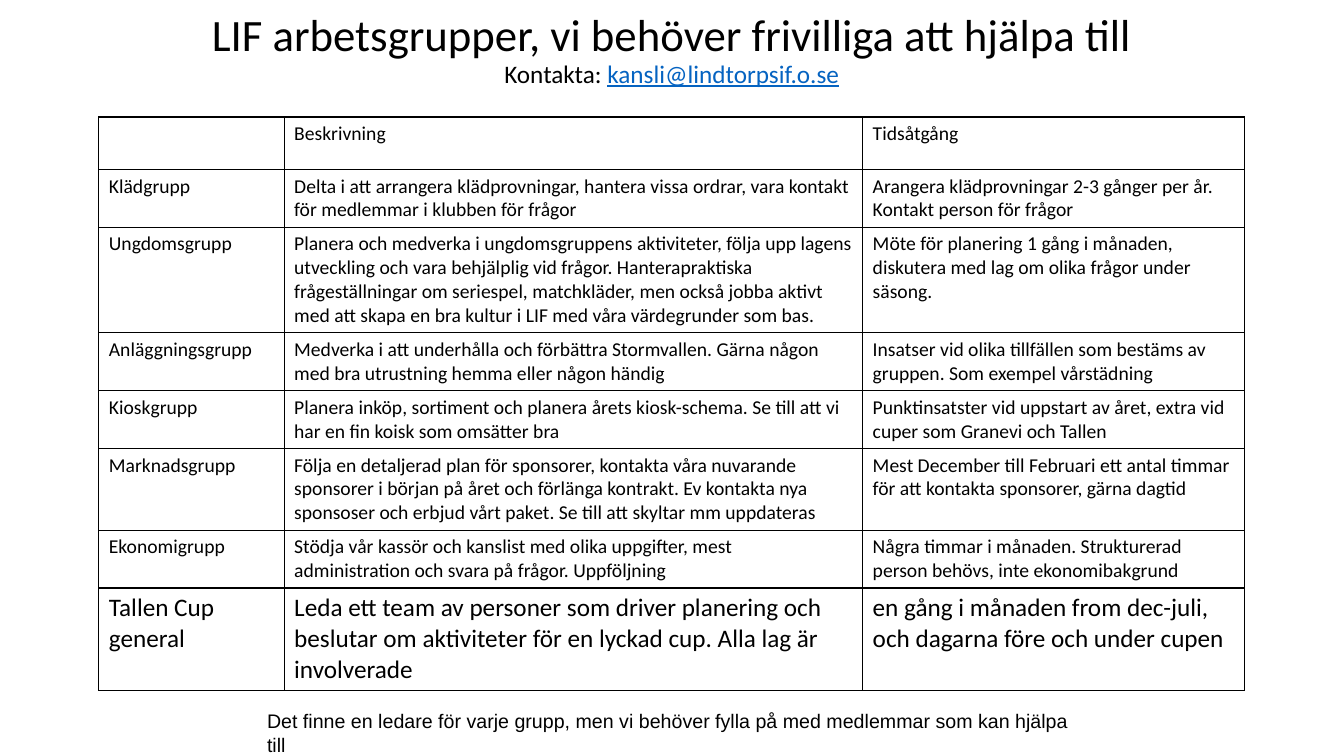
import pptx
import pptx.dml.color
import pptx.enum.text
import pptx.oxml
import pptx.oxml.ns
import pptx.util
from pptx.util import Cm

BLACK = "000000"
LINK_BLUE = "0563C1"
COLUMN_WIDTHS = [4.67, 14.58, 9.63]
ROW_HEIGHT = 1.32
GROUPS = [
    ("", "Beskrivning", "Tidsåtgång"),
    ("Klädgrupp",
     "Delta i att arrangera klädprovningar, hantera vissa ordrar, vara kontakt "
     "för medlemmar i klubben för frågor",
     "Arangera klädprovningar 2-3 gånger per år. Kontakt person för frågor"),
    ("Ungdomsgrupp",
     "Planera och medverka i ungdomsgruppens aktiviteter, följa upp lagens "
     "utveckling och vara behjälplig vid frågor. Hanterapraktiska "
     "frågeställningar om seriespel, matchkläder, men också jobba aktivt "
     "med att skapa en bra kultur i LIF med våra värdegrunder som bas.",
     "Möte för planering 1 gång i månaden, diskutera med lag om olika frågor "
     "under säsong."),
    ("Anläggningsgrupp",
     "Medverka i att underhålla och förbättra Stormvallen. Gärna någon "
     "med bra utrustning hemma eller någon händig",
     "Insatser vid olika tillfällen som bestäms av gruppen. Som exempel "
     "vårstädning"),
    ("Kioskgrupp",
     "Planera inköp, sortiment och planera årets kiosk-schema. Se till att vi "
     "har en fin koisk som omsätter bra",
     "Punktinsatster vid uppstart av året, extra vid cuper som Granevi och "
     "Tallen"),
    ("Marknadsgrupp",
     "Följa en detaljerad plan för sponsorer, kontakta våra nuvarande "
     "sponsorer i början på året och förlänga kontrakt. Ev kontakta nya "
     "sponsoser och erbjud vårt paket. Se till att skyltar mm uppdateras",
     "Mest December till Februari ett antal timmar för att kontakta sponsorer, "
     "gärna dagtid"),
    ("Ekonomigrupp",
     "Stödja vår kassör och kanslist med olika uppgifter, mest "
     "administration och svara på frågor. Uppföljning",
     "Några timmar i månaden. Strukturerad person behövs, inte "
     "ekonomibakgrund"),
    ("Tallen Cup general",
     "Leda ett team av personer som driver planering och beslutar om "
     "aktiviteter för en lyckad cup. Alla lag är involverade",
     "en gång i månaden from dec-juli, och dagarna före och under cupen"),
]


def rgb(colour):
    return pptx.dml.color.RGBColor.from_string(colour)


def add_text(para, text, size=14, font="Calibri", colour=BLACK, underline=None):
    span = para.add_run()
    span.text = text
    span.font.size = pptx.util.Pt(size)
    span.font.name = font
    span.font.color.rgb = rgb(colour)
    span.font.underline = underline


def add_borders(cell, colour=BLACK, width=1):
    properties = cell._tc.get_or_add_tcPr()
    for side in ("lnL", "lnR", "lnT", "lnB"):
        properties.append(pptx.oxml.parse_xml(
            f'<a:{side} {pptx.oxml.ns.nsdecls("a")} w="{pptx.util.Pt(width)}">'
            f'<a:solidFill><a:srgbClr val="{colour}"/></a:solidFill></a:{side}>'))


def fill_title(page):
    title = page.shapes.title
    title.left, title.top = Cm(4.23), Cm(0.66)
    title.width, title.height = Cm(25.4), Cm(1.7)
    frame = title.text_frame
    frame.auto_size = pptx.enum.text.MSO_AUTO_SIZE.NONE
    frame.vertical_anchor = pptx.enum.text.MSO_ANCHOR.BOTTOM
    para = frame.paragraphs[0]
    para.alignment = pptx.enum.text.PP_ALIGN.CENTER
    para.line_spacing = 0.9
    add_text(para, "LIF arbetsgrupper, vi behöver frivilliga att hjälpa till", size=32)
    para.add_line_break()
    add_text(para, "Kontakta: ", size=18)
    add_text(para, "kansli@lindtorpsif.o.se", size=18, colour=LINK_BLUE, underline=True)


def add_group_table(page):
    table = page.shapes.add_table(
        len(GROUPS), len(COLUMN_WIDTHS), Cm(2.49), Cm(2.95),
        Cm(sum(COLUMN_WIDTHS)), Cm(ROW_HEIGHT * len(GROUPS))).table
    table.first_row = False
    table.horz_banding = False
    for column, width in zip(table.columns, COLUMN_WIDTHS):
        column.width = Cm(width)
    for row_index, group in enumerate(GROUPS):
        is_last = row_index == len(GROUPS) - 1
        for column_index, text in enumerate(group):
            cell = table.cell(row_index, column_index)
            add_borders(cell)
            cell.fill.background()
            if text:
                add_text(cell.text_frame.paragraphs[0], text, size=18 if is_last else 14)


def add_footnote(page):
    box = page.shapes.add_textbox(Cm(6.48), Cm(17.75), Cm(21.29), Cm(0.86))
    frame = box.text_frame
    frame.word_wrap = True
    frame.auto_size = pptx.enum.text.MSO_AUTO_SIZE.SHAPE_TO_FIT_TEXT
    add_text(frame.paragraphs[0],
             "Det finne en ledare för varje grupp, men vi behöver fylla på med "
             "medlemmar som kan hjälpa till", font="Arial")


def main():
    deck = pptx.Presentation()
    deck.slide_width, deck.slide_height = Cm(33.87), Cm(19.05)
    title_only = deck.slide_layouts[5]
    page = deck.slides.add_slide(title_only)
    fill_title(page)
    add_group_table(page)
    add_footnote(page)
    deck.save("out.pptx")


if __name__ == "__main__":
    main()
